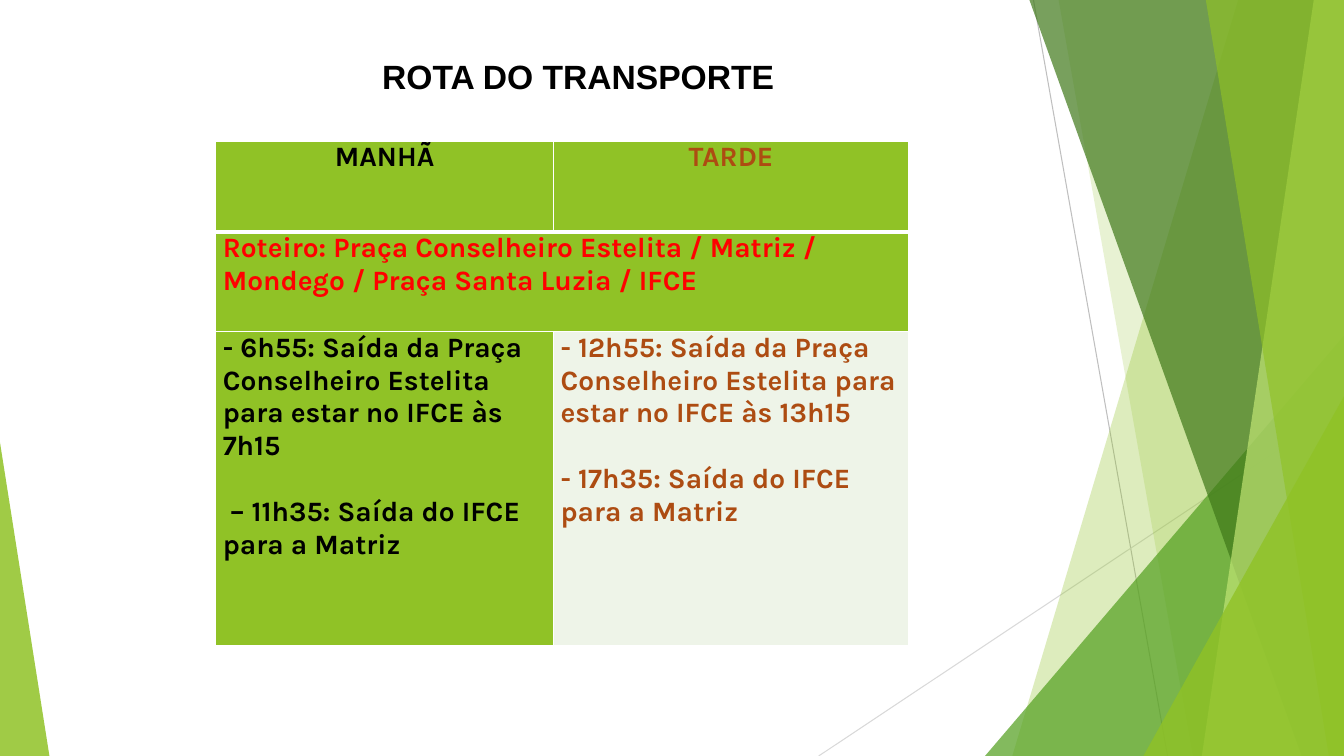
from lxml.etree import SubElement
from pptx import Presentation
from pptx.dml.color import RGBColor
from pptx.enum.shapes import MSO_CONNECTOR as Connector, MSO_SHAPE as Shape
from pptx.enum.text import MSO_ANCHOR as Anchor, PP_ALIGN as Align
from pptx.oxml.ns import qn
from pptx.util import Inches, Pt

WIDTH, HEIGHT = 13.33, 7.5
LIME, CREAM, WHITE = "90C226", "EEF4E8", "FFFFFF"
BLACK, RUST, RED = "000000", "AD4C12", "FF0000"
BLANK_LINE = Pt(23.5)


def color(hex_text):
    return RGBColor.from_string(hex_text)


def add_line(page, start, end, line_color):
    line = page.shapes.add_connector(
        Connector.STRAIGHT, *(Inches(value) for value in start + end))
    line.line.color.rgb = color(line_color)
    line.line.width = Pt(0.75)
    SubElement(line._element.spPr, qn("a:effectLst"))


def paint(shape, fill_color, opacity):
    """Fill a shape with a see-through colour; opacity is in percent."""
    shape.shadow.inherit = False
    shape.line.fill.background()
    shape.fill.solid()
    shape.fill.fore_color.rgb = color(fill_color)
    tint = shape._element.spPr.find(qn("a:solidFill"))[0]
    SubElement(tint, qn("a:alpha"), val=str(opacity * 1000))


def add_band(page, top_left, bottom_left, fill_color, opacity):
    """Draw a full-height band from a slanted left side to the slide's edge."""
    corners = [(WIDTH, 0), (WIDTH, HEIGHT), (bottom_left, HEIGHT)]
    builder = page.shapes.build_freeform(Inches(top_left), 0)
    builder.add_line_segments([(Inches(x), Inches(y)) for x, y in corners])
    paint(builder.convert_to_shape(), fill_color, opacity)


def add_corner(page, left, top, width, apex, fill_color, opacity):
    """Draw a right triangle on the slide's bottom; apex is 0 left or 1 right."""
    corner = page.shapes.add_shape(
        Shape.ISOSCELES_TRIANGLE, Inches(left), Inches(top),
        Inches(width), Inches(HEIGHT - top))
    corner.adjustments[0] = apex
    paint(corner, fill_color, opacity)


def add_run(para, text, font_name, size, text_color):
    span = para.add_run()
    span.text = text
    span.font.name = font_name
    span.font.size = Pt(size)
    span.font.bold = True
    span.font.color.rgb = color(text_color)


def add_title(page, text):
    box = page.shapes.add_textbox(
        Inches(3.67), Inches(0.5), Inches(4.13), Inches(0.5))
    frame = box.text_frame
    frame.word_wrap = False
    frame.vertical_anchor = Anchor.MIDDLE
    para = frame.paragraphs[0]
    para.alignment = Align.CENTER
    add_run(para, text, "Arial", 24, BLACK)


def set_border(cell, side, points):
    border = SubElement(cell._tc.get_or_add_tcPr(), qn(f"a:ln{side}"),
                        w=str(Pt(points)))
    fill = SubElement(border, qn("a:solidFill"))
    SubElement(fill, qn("a:srgbClr"), val=WHITE)


def fill_cell(cell, texts, text_color, fill_color, align):
    cell.margin_left = cell.margin_right = Inches(0.07)
    cell.margin_top = cell.margin_bottom = 0
    cell.fill.solid()
    cell.fill.fore_color.rgb = color(fill_color)
    frame = cell.text_frame
    for index, text in enumerate(texts):
        para = frame.add_paragraph() if index else frame.paragraphs[0]
        para.alignment = align
        if index:
            para.space_before = BLANK_LINE
        add_run(para, text, "Karla", 20, text_color)


def add_timetable(page):
    widths, heights = [3.35, 3.52], [0.9, 0.99, 3.12]
    table = page.shapes.add_table(
        len(heights), len(widths), Inches(2.14), Inches(1.4),
        Inches(sum(widths)), Inches(sum(heights))).table
    for column, width in zip(table.columns, widths):
        column.width = Inches(width)
    for row, height in zip(table.rows, heights):
        row.height = Inches(height)
    for row_index, row in enumerate(table.rows):
        for cell in row.cells:
            set_border(cell, "L", 1)
            set_border(cell, "R", 1)
            set_border(cell, "T", 3 if row_index == 1 else 1)
            set_border(cell, "B", 3 if row_index == 0 else 1)
    table.cell(1, 0).merge(table.cell(1, 1))

    route = ("Roteiro: Praça Conselheiro Estelita / Matriz / "
             "Mondego / Praça Santa Luzia / IFCE")
    morning = ["- 6h55: Saída da Praça Conselheiro Estelita "
               "para estar no IFCE às 7h15",
               " – 11h35: Saída do IFCE para a Matriz"]
    afternoon = ["- 12h55: Saída da Praça Conselheiro Estelita "
                 "para estar no IFCE às 13h15",
                 "- 17h35: Saída do IFCE para a Matriz"]
    fill_cell(table.cell(0, 0), ["MANHÃ"], BLACK, LIME, Align.CENTER)
    fill_cell(table.cell(0, 1), ["TARDE"], RUST, LIME, Align.CENTER)
    fill_cell(table.cell(1, 0), [route], RED, LIME, Align.LEFT)
    fill_cell(table.cell(2, 0), morning, BLACK, LIME, Align.LEFT)
    fill_cell(table.cell(2, 1), afternoon, RUST, CREAM, Align.LEFT)


def add_backdrop(page):
    add_line(page, (10.25, 0), (11.58, HEIGHT), "BFBFBF")
    add_line(page, (WIDTH, 4.03), (8.12, HEIGHT), "D9D9D9")
    add_band(page, 12.28, 10.04, LIME, 30)
    add_band(page, 10.5, 11.83, LIME, 20)
    add_corner(page, 9.77, 3.33, 3.56, 1, "54A021", 72)
    add_band(page, 10.21, 12.91, "3F7819", 70)
    add_band(page, 13.03, 11.92, "C0E474", 70)
    add_band(page, 11.96, 13.18, LIME, 65)
    add_corner(page, 11.34, 3.93, 1.99, 1, LIME, 80)
    add_corner(page, 0, 4.39, 0.49, 0, LIME, 85)


def main():
    deck = Presentation()
    deck.slide_width, deck.slide_height = Inches(WIDTH), Inches(HEIGHT)
    page = deck.slides.add_slide(deck.slide_layouts[6])
    add_backdrop(page)
    add_title(page, "ROTA DO TRANSPORTE")
    add_timetable(page)
    deck.save("out.pptx")


if __name__ == "__main__":
    main()
